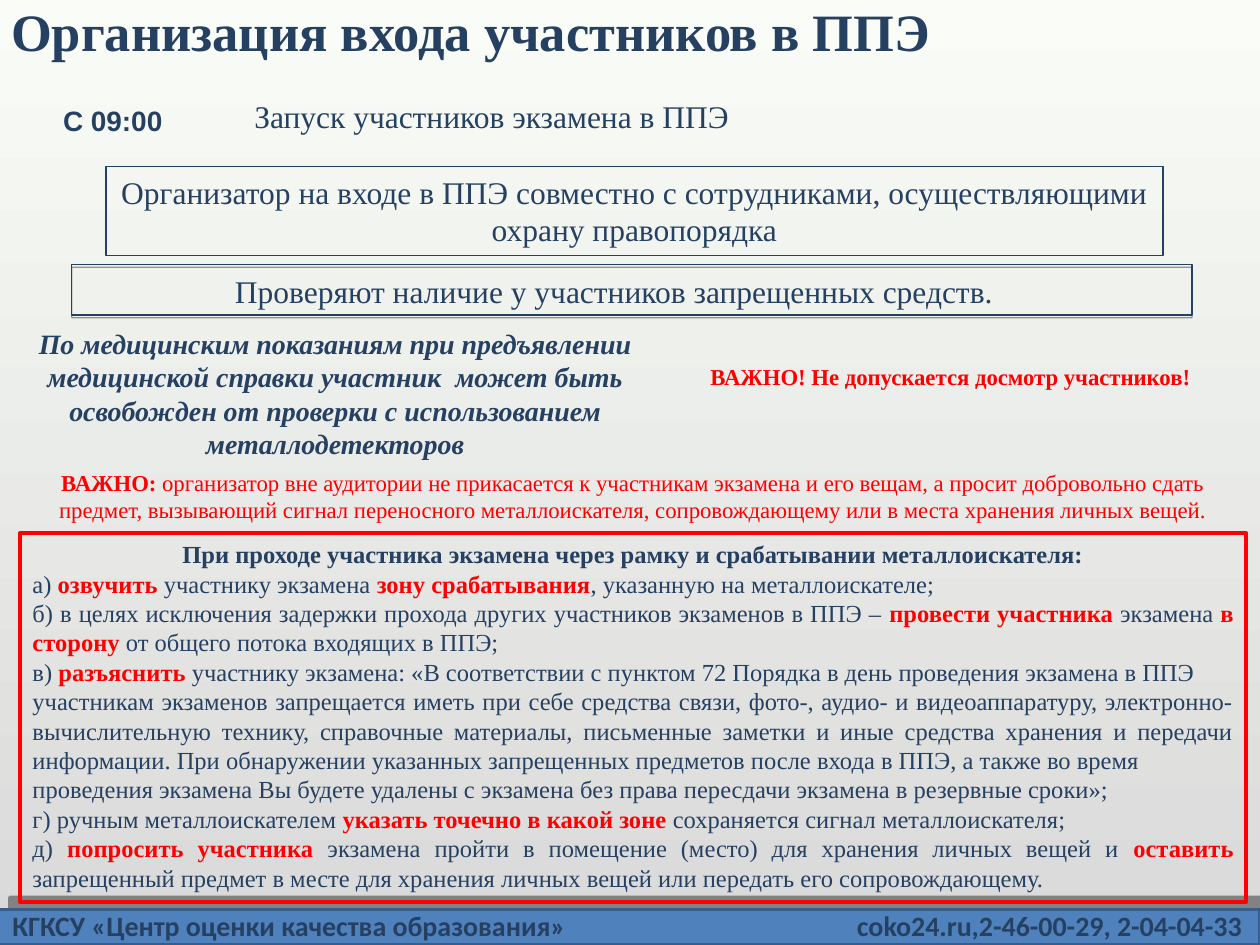
from dataclasses import dataclass

from lxml import etree
from pptx import Presentation
from pptx.dml.color import RGBColor
from pptx.enum.shapes import MSO_SHAPE
from pptx.enum.text import MSO_ANCHOR, MSO_AUTO_SIZE, PP_ALIGN
from pptx.oxml.ns import qn
from pptx.util import Inches, Pt

RECT = MSO_SHAPE.RECTANGLE
LEFT, CENTER, JUSTIFY = PP_ALIGN.LEFT, PP_ALIGN.CENTER, PP_ALIGN.JUSTIFY
TOP, MIDDLE = MSO_ANCHOR.TOP, MSO_ANCHOR.MIDDLE
GROW = MSO_AUTO_SIZE.SHAPE_TO_FIT_TEXT


@dataclass(frozen=True)
class Theme:
    navy: RGBColor = RGBColor.from_string("254061")
    red: RGBColor = RGBColor.from_string("FF0000")
    bar: RGBColor = RGBColor.from_string("4F81BD")
    bar_line: RGBColor = RGBColor.from_string("385D8A")
    bg_top: RGBColor = RGBColor.from_string("FAFCF7")
    bg_bottom: RGBColor = RGBColor.from_string("D9D9D9")
    serif: str = "Times New Roman"
    sans: str = "Arial"
    footer: str = "Calibri"
    title: int = 30
    lead: int = 18
    label: int = 16
    body: int = 14
    note: int = 13


T = Theme()

# Text between ** marks is bold red
STEPS = [
    "а) **озвучить** участнику экзамена **зону срабатывания**, указанную на металлоискателе;",
    "б) в целях исключения задержки прохода других участников экзаменов в ППЭ – "
    "**провести участника** экзамена **в сторону** от общего потока входящих в ППЭ;",
    "в) **разъяснить** участнику экзамена: «В соответствии с пунктом 72 Порядка "
    "в день проведения экзамена в ППЭ",
    "участникам экзаменов запрещается иметь при себе средства связи, фото-, аудио- и "
    "видеоаппаратуру, электронно-вычислительную технику, справочные материалы, письменные "
    "заметки и иные средства хранения и передачи информации. При обнаружении указанных "
    "запрещенных предметов после входа в ППЭ, а также во время",
    "проведения экзамена Вы будете удалены с экзамена без права пересдачи экзамена "
    "в резервные сроки»;",
    "г) ручным металлоискателем **указать точечно в какой зоне** сохраняется сигнал "
    "металлоискателя;",
    "д) **попросить участника** экзамена пройти в помещение (место) для хранения личных "
    "вещей и **оставить** запрещенный предмет в месте для хранения личных вещей или "
    "передать его сопровождающему.",
]


def write(p, text, size, font=T.serif, color=T.navy, bold=False, italic=False, align=LEFT):
    p.alignment = align
    f = p.font
    f.size, f.name, f.bold, f.italic = Pt(size), font, bold, italic
    f.color.rgb = color
    for i, part in enumerate(text.split("**")):
        if part:
            r = p.add_run()
            r.text = part
            if i % 2:
                r.font.bold = True
                r.font.color.rgb = T.red


def prepare(sp, anchor=TOP, grow=True):
    tf = sp.text_frame
    tf.word_wrap = True
    tf.vertical_anchor = anchor
    if grow:
        tf.auto_size = GROW
    return tf


def add_text(s, box, text, size, anchor=TOP, grow=True, **style):
    tf = prepare(s.shapes.add_textbox(*map(Inches, box)), anchor, grow)
    write(tf.paragraphs[0], text, size, **style)
    return tf


def add_box(s, box, line, width, fill=None):
    sp = s.shapes.add_shape(RECT, *map(Inches, box))
    sp.shadow.inherit = False
    if fill is None:
        sp.fill.background()
    else:
        sp.fill.solid()
        sp.fill.fore_color.rgb = fill
    sp.line.color.rgb = line
    sp.line.width = Pt(width)
    return sp


def add_shadow(sp, distance, angle, opacity):
    effects = sp._element.spPr.find(qn("a:effectLst"))
    shadow = etree.SubElement(effects, qn("a:outerShdw"), blurRad="0",
                              dist=str(Pt(distance)), dir=str(angle * 60000),
                              algn="t", rotWithShape="0")
    color = etree.SubElement(shadow, qn("a:srgbClr"), val="000000")
    etree.SubElement(color, qn("a:alpha"), val=str(opacity * 1000))


def add_background(s):
    fill = s.background.fill
    fill.gradient()
    fill.gradient_angle = 270
    for stop, color, pos in zip(fill.gradient_stops, (T.bg_top, T.bg_bottom), (0, 1)):
        stop.color.rgb = color
        stop.position = pos


def add_footer(s, box):
    x, y, w, h = box
    bar = add_box(s, (x - 0.02, y + 0.06, w + 0.02, 0.28), T.bar_line, 2, T.bar)
    add_shadow(bar, 10, 315, 40)
    tf = prepare(s.shapes.add_textbox(*map(Inches, box)))
    p = tf.paragraphs[0]
    # Contacts sit at a right tab stop
    tabs = etree.SubElement(p._p.get_or_add_pPr(), qn("a:tabLst"))
    etree.SubElement(tabs, qn("a:tab"), pos=str(Inches(w - 0.24)), algn="r")
    write(p, "КГКСУ «Центр оценки качества образования»\tcoko24.ru,2-46-00-29, 2-04-04-33",
          T.label, font=T.footer, bold=True)


def add_schedule(s, box):
    x, y, w, h = box
    add_text(s, (x, y + 0.05, 1.57, 0.37), "С 09:00", T.label,
             font=T.sans, bold=True, align=CENTER)
    add_text(s, (x + 1.81, y, w - 1.81, h), "Запуск участников экзамена в ППЭ", T.lead)


def add_check(s, box):
    x, y, w, h = box
    # Who checks
    who = add_box(s, (x + 0.41, y, 8.39, 0.71), T.navy, 0.75)
    write(prepare(who).paragraphs[0],
          "Организатор на входе в ППЭ совместно с\u00a0сотрудниками, осуществляющими "
          "охрану правопорядка", T.lead, align=CENTER)
    # What is checked
    frame = add_box(s, (x + 0.14, y + 0.78, 8.89, 0.4), T.navy, 0.75)
    add_shadow(frame, 1.6, 90, 38)
    add_text(s, (x, y + 0.79, 8.95, 0.41),
             "Проверяют наличие у участников запрещенных средств. ", T.lead, align=CENTER)


def add_warnings(s, box):
    x, y, w, h = box
    add_text(s, (x, y, 5, 1.17),
             "По медицинским показаниям при предъявлении медицинской справки участник  может "
             "быть освобожден от проверки с использованием металлодетекторов",
             T.label, bold=True, italic=True, align=CENTER)
    add_text(s, (x + 4.88, y + 0.29, 5, 0.32), "ВАЖНО! Не допускается досмотр участников!",
             T.note, color=T.red, bold=True, align=CENTER)
    add_text(s, (x + 0.13, y + 1.13, 9.45, 0.54),
             "**ВАЖНО:** организатор вне аудитории не прикасается к участникам экзамена и его "
             "вещам, а просит добровольно сдать предмет, вызывающий сигнал переносного "
             "металлоискателя, сопровождающему или в места хранения личных вещей.",
             T.note, color=T.red, align=CENTER)


def add_procedure(s, box):
    tf = prepare(add_box(s, box, T.red, 2.25))
    write(tf.paragraphs[0],
          "При проходе участника экзамена через рамку и срабатывании металлоискателя:",
          T.body, bold=True, align=CENTER)
    for step in STEPS:
        write(tf.add_paragraph(), step, T.body, align=JUSTIFY)


def main():
    prs = Presentation()
    prs.slide_width, prs.slide_height = Inches(10), Inches(7.5)
    s = prs.slides.add_slide(prs.slide_layouts[6])
    add_background(s)
    add_footer(s, (0, 7.16, 10, 0.37))
    add_text(s, (-0.01, -0.38, 9.49, 1.25), "Организация входа участников в ППЭ", T.title,
             anchor=MIDDLE, grow=False, bold=True)
    add_schedule(s, (0.11, 0.72, 6.54, 0.4))
    add_check(s, (0.43, 1.32, 9.03, 1.2))
    add_warnings(s, (0.16, 2.54, 9.88, 1.67))
    add_procedure(s, (0.16, 4.23, 9.73, 2.93))
    prs.save("out.pptx")


if __name__ == "__main__":
    main()
